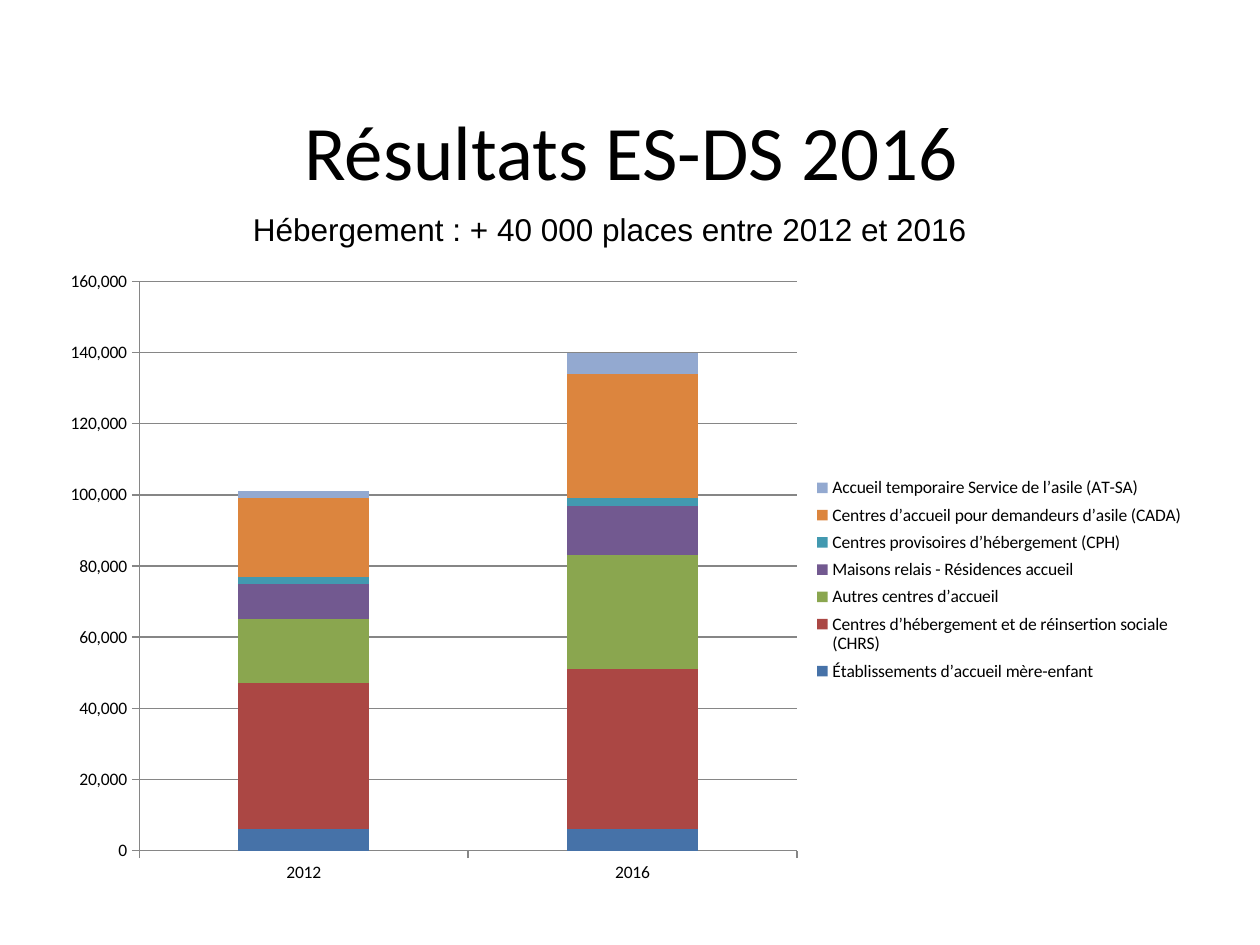
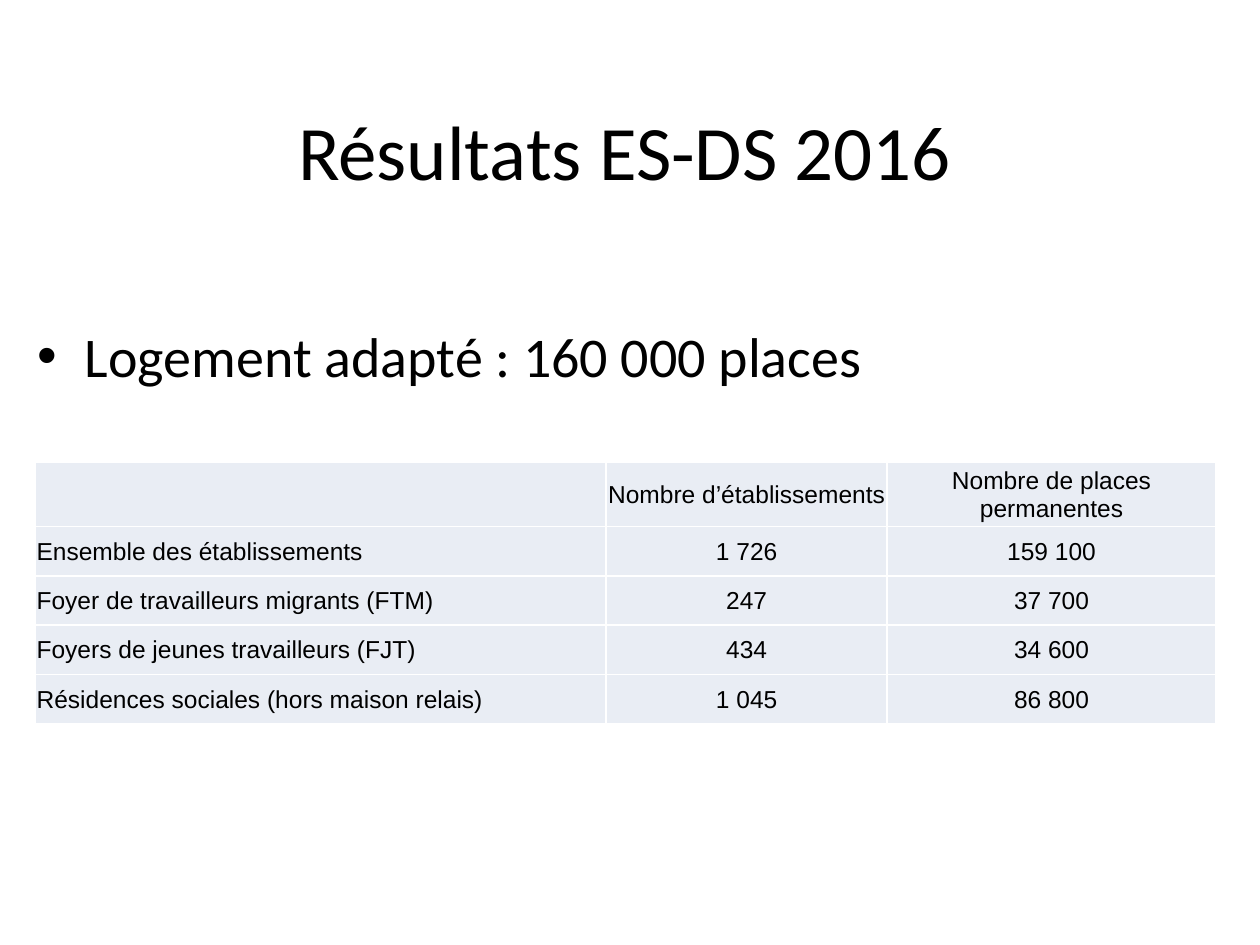
from lxml import etree
from pptx import Presentation
from pptx.chart.data import CategoryChartData
from pptx.dml.color import RGBColor
from pptx.enum.chart import XL_CHART_TYPE as CT, XL_LEGEND_POSITION as LP, XL_TICK_MARK as TM
from pptx.enum.text import MSO_ANCHOR as MA, PP_ALIGN as PA
from pptx.oxml import parse_xml
from pptx.oxml.ns import nsdecls, qn
from pptx.util import Pt

BLACK = RGBColor(0x00, 0x00, 0x00)
WHITE = RGBColor(0xFF, 0xFF, 0xFF)
GREY = RGBColor(0x86, 0x86, 0x86)
CELL = RGBColor(0xE9, 0xED, 0xF4)
BLUE = RGBColor(0x46, 0x72, 0xA8)
RED = RGBColor(0xAB, 0x47, 0x44)
GREEN = RGBColor(0x8A, 0xA6, 0x4F)
PURPLE = RGBColor(0x72, 0x59, 0x90)
TEAL = RGBColor(0x42, 0x99, 0xB0)
ORANGE = RGBColor(0xDC, 0x85, 0x3E)
PALE_BLUE = RGBColor(0x93, 0xA9, 0xD0)

TITLE = "Résultats ES-DS 2016"
YEARS = ["2012", "2016"]
PLACES = [
    ("Établissements d’accueil mère-enfant", (6000, 6000), BLUE),
    ("Centres d’hébergement et de réinsertion sociale (CHRS)", (41000, 45000), RED),
    ("Autres centres d’accueil", (18000, 32000), GREEN),
    ("Maisons relais - Résidences accueil", (10000, 14000), PURPLE),
    ("Centres provisoires d’hébergement (CPH)", (2000, 2000), TEAL),
    ("Centres d’accueil pour demandeurs d’asile (CADA)", (22000, 35000), ORANGE),
    ("Accueil temporaire Service de l’asile (AT-SA)", (2000, 6000), PALE_BLUE),
]
HOUSING = [
    ("", "Nombre d’établissements", "Nombre de places permanentes"),
    ("Ensemble des établissements", "1 726", "159 100"),
    ("Foyer de travailleurs migrants (FTM)", "247", "37 700"),
    ("Foyers de jeunes travailleurs (FJT)", "434", "34 600"),
    ("Résidences sociales (hors maison relais)", "1 045", "86 800"),
]


def set_font(font, size, name):
    font.size, font.name = Pt(size), name
    font.color.rgb = BLACK


def add_text(tf, text, size, name, align=PA.LEFT):
    p = tf.paragraphs[0]
    p.alignment = align
    r = p.add_run()
    r.text = text
    set_font(r.font, size, name)
    return p


def add_box(s, box):
    tf = s.shapes.add_textbox(*map(Pt, box)).text_frame
    tf.word_wrap = True
    return tf


def add_titled_slide(prs, left):
    s = prs.slides.add_slide(prs.slide_layouts[5])
    sp = s.shapes.title
    sp.left, sp.top, sp.width, sp.height = map(Pt, (left, 49, 648, 73.4))
    sp.text_frame.vertical_anchor = MA.MIDDLE
    add_text(sp.text_frame, TITLE, 44, "Calibri", PA.CENTER)
    return s


def make_layout(x, y, w, h, inner=False):
    target = '<c:layoutTarget val="inner"/>' if inner else ""
    modes = '<c:xMode val="edge"/><c:yMode val="edge"/>'
    sizes = "".join(f'<c:{k} val="{v}"/>' for k, v in zip("xywh", (x, y, w, h)))
    return parse_xml(f'<c:layout {nsdecls("c")}><c:manualLayout>{target}{modes}{sizes}'
                     '</c:manualLayout></c:layout>')


def replace_layout(parent, index, layout):
    for old in parent.findall(qn("c:layout")):
        parent.remove(old)
    parent.insert(index, layout)


def add_places_chart(s, box):
    data = CategoryChartData(number_format="#,##0")
    data.categories = YEARS
    for name, values, _ in PLACES:
        data.add_series(name, values)
    chart = s.shapes.add_chart(CT.COLUMN_STACKED, *map(Pt, box), data).chart
    set_font(chart.font, 10, "Calibri")
    chart.has_title = False
    plot = chart.plots[0]
    plot.gap_width, plot.overlap, plot.vary_by_categories = 150, 100, False
    for series, (_, _, color) in zip(plot.series, PLACES):
        series.format.fill.solid()
        series.format.fill.fore_color.rgb = color
    value_axis = chart.value_axis
    value_axis.minimum_scale, value_axis.maximum_scale = 0, 160000
    value_axis.major_unit = 20000
    value_axis.has_major_gridlines = True
    value_axis.tick_labels.number_format = "#,##0"
    value_axis.tick_labels.number_format_is_linked = False
    for axis in (chart.category_axis, value_axis):
        axis.major_tick_mark, axis.minor_tick_mark = TM.OUTSIDE, TM.NONE
    for part in (chart.category_axis, value_axis, value_axis.major_gridlines):
        part.format.line.color.rgb = GREY
        part.format.line.width = Pt(0.75)
    chart.has_legend = True
    legend = chart.legend
    legend.position, legend.include_in_layout = LP.RIGHT, False
    set_font(legend.font, 10, "Calibri")
    plot_area = chart.element.find(".//" + qn("c:plotArea"))
    replace_layout(plot_area, 0, make_layout(0.075, 0.027, 0.58, 0.913, True))
    legend_xml = chart.element.find(".//" + qn("c:legend"))
    replace_layout(legend_xml, 1, make_layout(0.67, 0.33, 0.33, 0.35))


def add_bullet(s, box, text):
    p = add_text(add_box(s, box), text, 32, "Calibri")
    pPr = p._p.get_or_add_pPr()
    pPr.set("marL", str(Pt(27)))
    pPr.set("indent", str(-Pt(27)))
    etree.SubElement(pPr, qn("a:buFont"), typeface="Arial")
    etree.SubElement(pPr, qn("a:buChar"), char="•")


def add_borders(cell):
    tcPr = cell._tc.get_or_add_tcPr()
    for i, side in enumerate(("lnL", "lnR", "lnT", "lnB")):
        tcPr.insert(i, parse_xml(
            f'<a:{side} {nsdecls("a")} w="{Pt(1)}"><a:solidFill>'
            f'<a:srgbClr val="{WHITE}"/></a:solidFill></a:{side}>'))


def add_housing_table(s, left, top, widths, heights):
    table = s.shapes.add_table(len(heights), len(widths), Pt(left), Pt(top),
                               Pt(sum(widths)), Pt(sum(heights))).table
    for col, width in zip(table.columns, widths):
        col.width = Pt(width)
    for row, height, texts in zip(table.rows, heights, HOUSING):
        row.height = Pt(height)
        for j, (cell, text) in enumerate(zip(row.cells, texts)):
            cell.margin_left = cell.margin_right = cell.margin_top = Pt(0.72)
            cell.margin_bottom = 0
            cell.vertical_anchor = MA.MIDDLE
            cell.fill.solid()
            cell.fill.fore_color.rgb = CELL
            add_borders(cell)
            if text:
                add_text(cell.text_frame, text, 14, "Arial", PA.CENTER if j else PA.LEFT)


def build_shelter_slide(prs):
    s = add_titled_slide(prs, 36.7)
    add_places_chart(s, (31, 151.2, 648, 356.4))
    add_text(add_box(s, (36.7, 116.6, 623.5, 28.8)),
             "Hébergement : + 40 000 places entre 2012 et 2016", 18, "Arial", PA.CENTER)


def build_housing_slide(prs):
    s = add_titled_slide(prs, 33.1)
    add_bullet(s, (14.4, 180, 666.7, 317.5), "Logement adapté : 160 000 places")
    add_housing_table(s, 20.2, 264.2, (326.2, 160.6, 187.9), [36.7] + [28.2] * 4)


def main():
    prs = Presentation()
    prs.slide_width, prs.slide_height = Pt(720), Pt(540)
    build_shelter_slide(prs)
    build_housing_slide(prs)
    prs.save("out.pptx")


if __name__ == "__main__":
    main()
